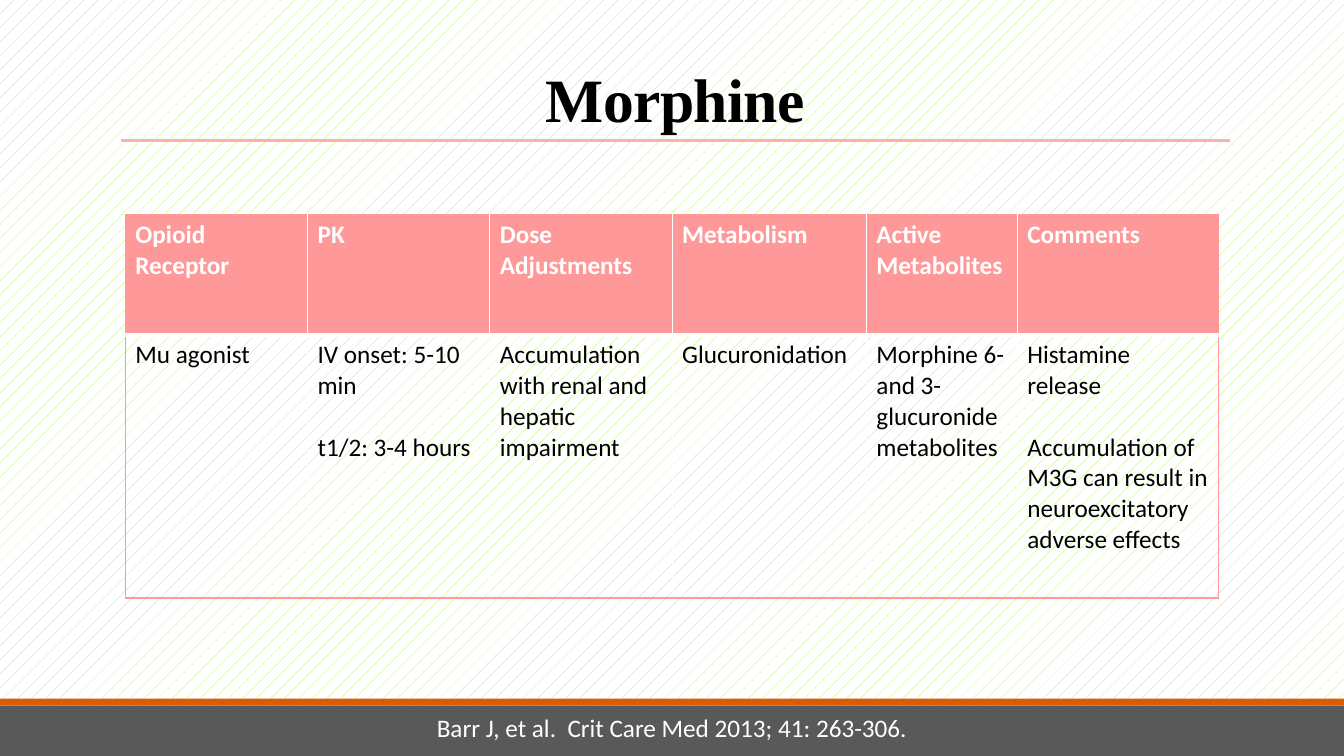
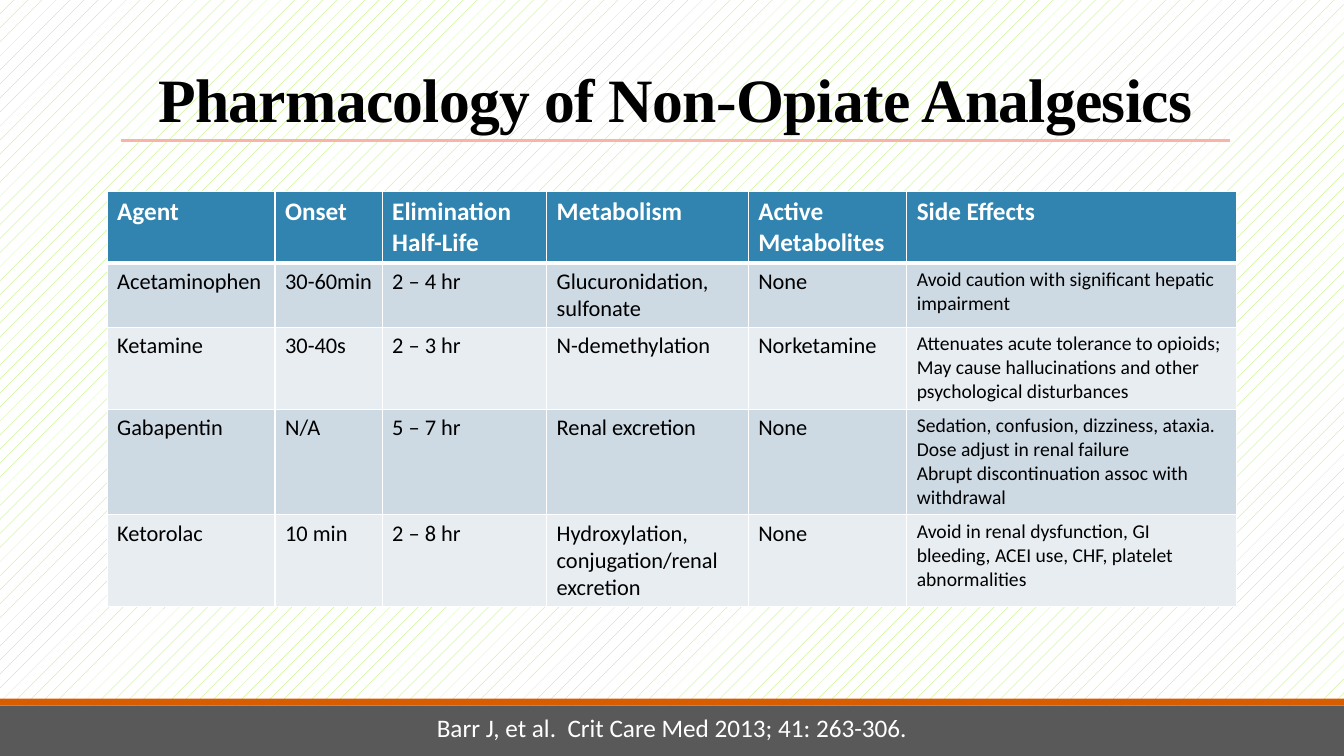
"""Build two slides on the pharmacology of opioid and non-opiate analgesics."""
from lxml.etree import SubElement
from pptx import Presentation
from pptx.dml.color import RGBColor
from pptx.enum.dml import MSO_PATTERN
from pptx.enum.shapes import MSO_CONNECTOR, MSO_SHAPE
from pptx.enum.text import MSO_ANCHOR, PP_ALIGN
from pptx.oxml.ns import qn
from pptx.util import Pt

WHITE = RGBColor(0xFF, 0xFF, 0xFF)
BLACK = RGBColor(0x00, 0x00, 0x00)
LIME = RGBColor(0xA7, 0xEA, 0x52)
GRAY = RGBColor(0x59, 0x59, 0x59)
ORANGE = RGBColor(0xD8, 0x5C, 0x00)
SALMON = RGBColor(0xF9, 0xB3, 0xA7)
PINK = RGBColor(0xFF, 0x99, 0x99)
BLUE = RGBColor(0x30, 0x84, 0xAF)
BAND_DARK = RGBColor(0xCD, 0xD9, 0xE3)
BAND_LIGHT = RGBColor(0xE8, 0xED, 0xF2)

TITLE_FONT = {"name": "Times New Roman", "size": Pt(44), "bold": True}
BODY_FONT = {"name": "Calibri", "size": Pt(18), "bold": False}
HEADER_FONT = BODY_FONT | {"bold": True}
CITATION = "Barr J, et al.  Crit Care Med 2013; 41: 263-306."
BANDS = [(504, 36, GRAY), (499, 5, ORANGE)]

SLIDES = [
    {
        "title": "Morphine",
        "left": 89.5, "top": 153.4,
        "columns": [130.2, 130.2, 130.2, 138.8, 107.8, 143.6],
        "heights": [85.7, 188],
        "header": PINK, "outline": PINK, "bands": [None],
        "sizes": [18] * 6, "gap": 22,
        "rows": [
            ["Opioid Receptor", "PK", "Dose Adjustments", "Metabolism",
             "Active Metabolites", "Comments"],
            ["Mu agonist", "IV onset: 5-10 min\nt1/2: 3-4 hours",
             "Accumulation with renal and hepatic impairment", "Glucuronidation",
             "Morphine 6- and 3- glucuronide metabolites",
             "Histamine release\nAccumulation of M3G can result in "
             "neuroexcitatory adverse effects"],
        ],
    },
    {
        "title": "Pharmacology of Non-Opiate Analgesics",
        "left": 76.5, "top": 136.8,
        "columns": [120, 76.5, 117.5, 144, 113.2, 235.5],
        "heights": [51, 46, 58.5, 75.5, 65.5],
        "header": BLUE, "outline": WHITE, "bands": [BAND_DARK, BAND_LIGHT],
        "sizes": [16] * 5 + [14], "gap": 0,
        "rows": [
            ["Agent", "Onset", "Elimination Half-Life", "Metabolism",
             "Active Metabolites", "Side Effects"],
            ["Acetaminophen", "30-60min", "2 – 4 hr", "Glucuronidation, sulfonate",
             "None", "Avoid caution with significant hepatic impairment"],
            ["Ketamine", "30-40s", "2 – 3 hr", "N-demethylation", "Norketamine",
             "Attenuates acute tolerance to opioids;\n"
             "May cause hallucinations and other psychological disturbances"],
            ["Gabapentin", "N/A", "5 – 7 hr", "Renal excretion", "None",
             "Sedation, confusion, dizziness, ataxia.\nDose adjust in renal failure\n"
             "Abrupt discontinuation assoc with withdrawal"],
            ["Ketorolac", "10 min", "2 – 8 hr",
             "Hydroxylation, conjugation/renal excretion", "None",
             "Avoid in renal dysfunction, GI bleeding, ACEI use, CHF, "
             "platelet abnormalities"],
        ],
    },
]


def write(frame, text, font, color, gap=0, align=PP_ALIGN.LEFT):
    """Fill a text frame with one formatted paragraph per line of text."""
    frame.word_wrap = True
    for index, line in enumerate(text.split("\n")):
        para = frame.add_paragraph() if index else frame.paragraphs[0]
        para.alignment = align
        if index:
            para.space_before = Pt(gap)
        span = para.add_run()
        span.text = line
        for name, value in font.items():
            setattr(span.font, name, value)
        span.font.color.rgb = color


def add_border(cell, side, color, width):
    """Draw one side of a table cell."""
    line = SubElement(cell._tc.get_or_add_tcPr(), qn(f"a:ln{side}"), w=str(Pt(width)))
    fill = SubElement(line, qn("a:solidFill"))
    SubElement(fill, qn("a:srgbClr"), val=str(color))


deck = Presentation()
deck.slide_width, deck.slide_height = Pt(960), Pt(540)

for content in SLIDES:
    page = deck.slides.add_slide(deck.slide_layouts[6])
    backdrop = page.background.fill
    backdrop.patterned()
    backdrop.pattern = MSO_PATTERN.PERCENT_5
    backdrop.fore_color.rgb = LIME
    backdrop.back_color.rgb = WHITE

    for top, height, color in BANDS:
        band = page.shapes.add_shape(MSO_SHAPE.RECTANGLE, 0, Pt(top), Pt(960), Pt(height))
        band.shadow.inherit = False
        band.fill.solid()
        band.fill.fore_color.rgb = color
        band.line.fill.background()

    rule = page.shapes.add_connector(
        MSO_CONNECTOR.STRAIGHT, Pt(86.4), Pt(100.2), Pt(878.4), Pt(100.2))
    rule.line.color.rgb = SALMON
    rule.line.width = Pt(2.25)
    SubElement(rule._element.spPr, qn("a:effectLst"))

    title = page.shapes.add_textbox(Pt(86.4), Pt(22.3), Pt(792), Pt(77.8)).text_frame
    title.vertical_anchor = MSO_ANCHOR.BOTTOM
    write(title, content["title"], TITLE_FONT, BLACK, align=PP_ALIGN.CENTER)
    title.paragraphs[0].line_spacing = 0.85
    title.paragraphs[0].runs[0].font._element.set("spc", "-50")

    rows, columns, heights = content["rows"], content["columns"], content["heights"]
    table = page.shapes.add_table(
        len(rows), len(columns), Pt(content["left"]), Pt(content["top"]),
        Pt(sum(columns)), Pt(sum(heights))).table
    table.horz_banding = False
    for column, width in zip(table.columns, columns):
        column.width = Pt(width)
    for row, height in zip(table.rows, heights):
        row.height = Pt(height)

    last_row, last_column = len(rows) - 1, len(columns) - 1
    for r, texts in enumerate(rows):
        for c, text in enumerate(texts):
            cell = table.cell(r, c)
            outer = {"L": c == 0, "R": c == last_column, "T": r == 0, "B": r == last_row}
            for side, is_outer in outer.items():
                under_header = (r, side) in [(0, "B"), (1, "T")]
                add_border(cell, side, content["outline"] if is_outer else WHITE,
                           3 if under_header else 1)
            bands = content["bands"]
            fill = bands[(r - 1) % len(bands)] if r else content["header"]
            if fill is None:
                cell.fill.background()
            else:
                cell.fill.solid()
                cell.fill.fore_color.rgb = fill
            font = BODY_FONT | {"size": Pt(content["sizes"][c])} if r else HEADER_FONT
            write(cell.text_frame, text, font, BLACK if r else WHITE, content["gap"])

    citation = page.shapes.add_textbox(Pt(301), Pt(505.5), Pt(358), Pt(29)).text_frame
    write(citation, CITATION, BODY_FONT, WHITE, align=PP_ALIGN.CENTER)

deck.save("out.pptx")
